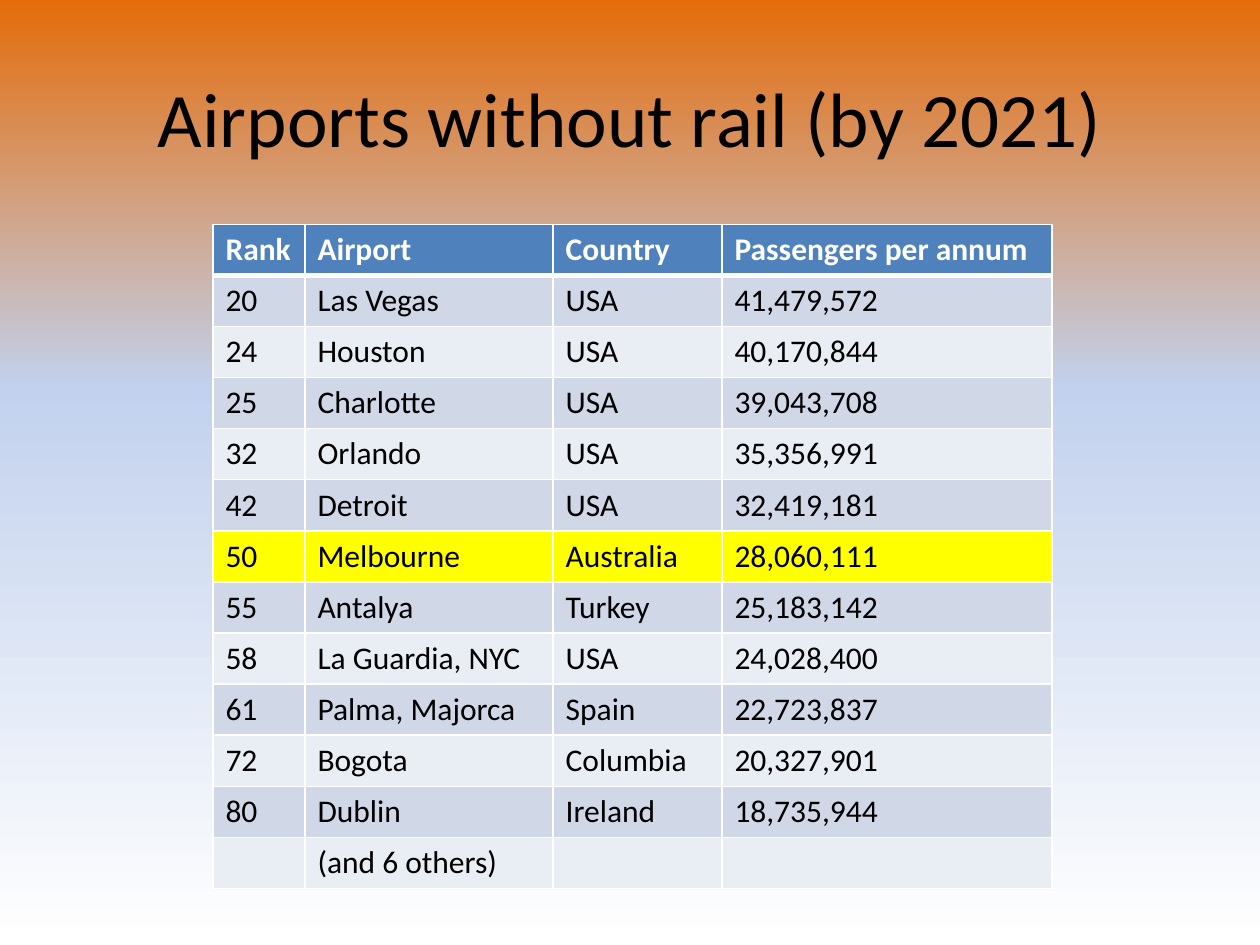
from copy import deepcopy

from lxml.etree import SubElement
from pptx import Presentation
from pptx.dml.color import RGBColor
from pptx.enum.text import MSO_ANCHOR, PP_ALIGN
from pptx.oxml.ns import qn
from pptx.util import Inches, Pt

FONT = "Calibri"
BLACK, WHITE = "000000", "FFFFFF"
HEADER_BLUE, HIGHLIGHT = "4F81BD", "FFFF00"
BANDS = ("D0D8E8", "E9EDF4")
SKY = ((0, "E46C0A"), (0.41, "C2D1ED"), (1, WHITE))

COLUMN_WIDTHS = (0.73, 1.97, 1.34, 2.62)
TABLE_HEIGHT = 5.27
HOME_AIRPORT = "Melbourne"
AIRPORTS = (
    ("Rank", "Airport", "Country", "Passengers per annum"),
    ("20", "Las Vegas", "USA", "41,479,572"),
    ("24", "Houston", "USA", "40,170,844"),
    ("25", "Charlotte", "USA", "39,043,708"),
    ("32", "Orlando", "USA", "35,356,991"),
    ("42", "Detroit", "USA", "32,419,181"),
    ("50", "Melbourne", "Australia", "28,060,111"),
    ("55", "Antalya", "Turkey", "25,183,142"),
    ("58", "La Guardia, NYC", "USA", "24,028,400"),
    ("61", "Palma, Majorca", "Spain", "22,723,837"),
    ("72", "Bogota", "Columbia", "20,327,901"),
    ("80", "Dublin", "Ireland", "18,735,944"),
    ("", "(and 6 others)", "", ""),
)


def rgb(hex_color):
    return RGBColor.from_string(hex_color)


def add_run(paragraph, text, size, color, bold=False):
    run = paragraph.add_run()
    run.text = text
    run.font.name = FONT
    run.font.size = Pt(size)
    run.font.bold = bold
    run.font.color.rgb = rgb(color)


def paint_background(slide):
    fill = slide.background.fill
    fill.gradient()
    fill.gradient_angle = 270  # counter-clockwise, so top to bottom
    # The default gradient has two stops; add the third
    stop_list = next(slide.element.iter(qn("a:gsLst")))
    stop_list.append(deepcopy(stop_list[-1]))
    for stop, (position, color) in zip(fill.gradient_stops, SKY):
        stop.position = position
        stop.color.rgb = rgb(color)


def add_title(slide, text):
    title = slide.shapes.title
    title.left, title.top = Inches(0.5), Inches(0.3)
    title.width, title.height = Inches(9), Inches(1.25)
    title.text_frame.vertical_anchor = MSO_ANCHOR.MIDDLE
    paragraph = title.text_frame.paragraphs[0]
    paragraph.alignment = PP_ALIGN.CENTER
    add_run(paragraph, text, 44, BLACK)


def set_borders(cell, top=1, bottom=1):
    properties = cell._tc.get_or_add_tcPr()
    sides = (("a:lnL", 1), ("a:lnR", 1), ("a:lnT", top), ("a:lnB", bottom))
    for index, (tag, width) in enumerate(sides):
        line = SubElement(properties, qn(tag), w=str(Pt(width)))
        SubElement(SubElement(line, qn("a:solidFill")), qn("a:srgbClr"), val=WHITE)
        properties.insert(index, line)  # borders come before the fill


def row_fill(row_index, airport):
    if row_index == 0:
        return HEADER_BLUE
    if airport == HOME_AIRPORT:
        return HIGHLIGHT
    return BANDS[(row_index - 1) % 2]


def add_airport_table(slide):
    table = slide.shapes.add_table(
        len(AIRPORTS), len(COLUMN_WIDTHS), Inches(1.69), Inches(1.78),
        Inches(sum(COLUMN_WIDTHS)), Inches(TABLE_HEIGHT)).table
    for column, width in zip(table.columns, COLUMN_WIDTHS):
        column.width = Inches(width)
    for row_index, values in enumerate(AIRPORTS):
        header = row_index == 0
        color = row_fill(row_index, values[1])
        for column_index, value in enumerate(values):
            cell = table.cell(row_index, column_index)
            cell.fill.solid()
            cell.fill.fore_color.rgb = rgb(color)
            # A heavy rule separates the header from the first airport
            set_borders(cell, top=3 if row_index == 1 else 1, bottom=3 if header else 1)
            if value:
                add_run(cell.text_frame.paragraphs[0], value, 18,
                        WHITE if header else BLACK, bold=header)


def main():
    presentation = Presentation()
    presentation.slide_width, presentation.slide_height = Inches(10), Inches(7.5)
    slide = presentation.slides.add_slide(presentation.slide_layouts[5])  # title only
    paint_background(slide)
    add_title(slide, "Airports without rail (by 2021)")
    add_airport_table(slide)
    presentation.save("out.pptx")


if __name__ == "__main__":
    main()
